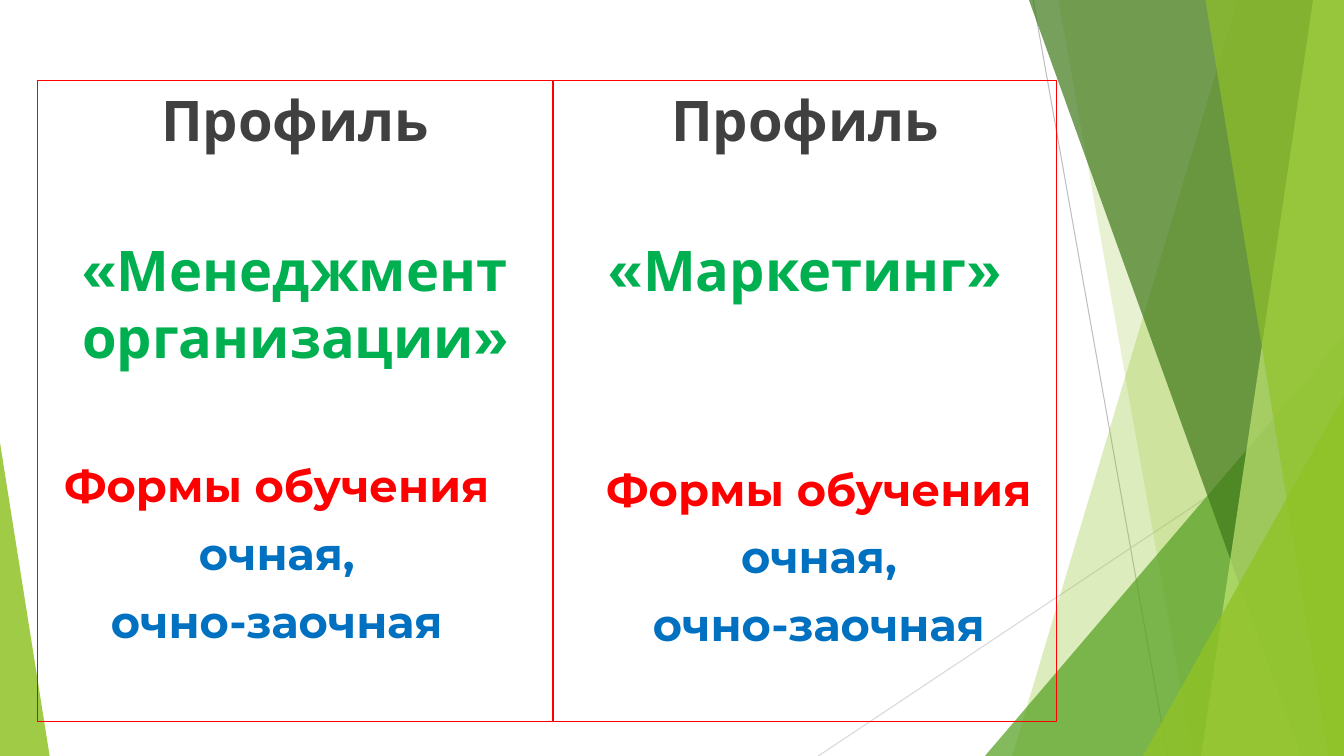
"""Builds a slide comparing two study profiles beside a green faceted backdrop."""
from lxml.etree import SubElement
from pptx import Presentation
from pptx.dml.color import RGBColor
from pptx.enum.shapes import MSO_CONNECTOR, MSO_SHAPE
from pptx.enum.text import MSO_ANCHOR, PP_ALIGN
from pptx.oxml.ns import qn
from pptx.util import Pt

GREEN = RGBColor(0x90, 0xC2, 0x26)
MID_GREEN = RGBColor(0x54, 0xA0, 0x21)
DARK_GREEN = RGBColor(0x3F, 0x78, 0x19)
PALE_GREEN = RGBColor(0xC0, 0xE4, 0x74)
SILVER = RGBColor(0xBF, 0xBF, 0xBF)
LIGHT_GREY = RGBColor(0xD9, 0xD9, 0xD9)
CHARCOAL = RGBColor(0x40, 0x40, 0x40)
PROFILE_GREEN = RGBColor(0x00, 0xB0, 0x50)
RED = RGBColor(0xFF, 0x00, 0x00)
BLUE = RGBColor(0x00, 0x70, 0xC0)
WIDTH, HEIGHT = 960, 540


def paint(facet, color, opacity):
    facet.shadow.inherit = False
    facet.fill.solid()
    facet.fill.fore_color.rgb = color
    facet.line.fill.background()
    tint = facet.fill._xPr.find(qn("a:solidFill"))[0]
    SubElement(tint, qn("a:alpha"), val=str(opacity * 1000))


def write(frame, text, *, first=False, font, size, color, before=10):
    paragraph = frame.paragraphs[0] if first else frame.add_paragraph()
    paragraph.alignment = PP_ALIGN.CENTER
    paragraph.space_before = Pt(before)
    run = paragraph.add_run()
    run.text = text
    run.font.name = font
    run.font.size = Pt(size)
    run.font.bold = True
    run.font.color.rgb = color


prs = Presentation()
prs.slide_width, prs.slide_height = Pt(WIDTH), Pt(HEIGHT)
slide = prs.slides.add_slide(prs.slide_layouts[6])
shapes = slide.shapes

for x1, y1, x2, y2, color in [
    (738, 0, 834, HEIGHT, SILVER),
    (WIDTH, 290, 584.5, HEIGHT, LIGHT_GREY),
]:
    ray = shapes.add_connector(MSO_CONNECTOR.STRAIGHT, Pt(x1), Pt(y1), Pt(x2), Pt(y2))
    ray.line.color.rgb = color
    ray.line.width = Pt(0.75)
    SubElement(ray._element.spPr, qn("a:effectLst"))

for kind, *place, color, opacity in [
    ("band", 884, 723, GREEN, 30),
    ("band", 756, 852, GREEN, 20),
    ("corner", 703.5, 256.5, 300, 1, MID_GREEN, 72),
    ("band", 735, 929.5, DARK_GREEN, 70),
    ("band", 938, 858, PALE_GREEN, 70),
    ("band", 861, 949, GREEN, 65),
    ("corner", 816.5, 143.5, 257, 1, GREEN, 80),
    ("corner", 0, 35.5, 224, 0, GREEN, 85),
]:
    if kind == "band":
        top_x, bottom_x = place
        outline = shapes.build_freeform(Pt(top_x), 0)
        outline.add_line_segments(
            [(Pt(WIDTH), 0), (Pt(WIDTH), Pt(HEIGHT)), (Pt(bottom_x), Pt(HEIGHT))]
        )
        facet = outline.convert_to_shape()
    else:
        left, width, height, apex = place
        facet = shapes.add_shape(
            MSO_SHAPE.ISOSCELES_TRIANGLE, Pt(left), Pt(HEIGHT - height), Pt(width), Pt(height)
        )
        facet.adjustments[0] = apex
    paint(facet, color, opacity)

for left, width, profile in [
    (27, 367.5, "«Менеджмент организации»"),
    (395.5, 359, "«Маркетинг»"),
]:
    panel = shapes.add_shape(MSO_SHAPE.RECTANGLE, Pt(left), Pt(57.5), Pt(width), Pt(458))
    panel.shadow.inherit = False
    panel.fill.background()
    panel.line.color.rgb = RED
    panel.line.width = Pt(0.75)
    frame = panel.text_frame
    frame.word_wrap = True
    frame.vertical_anchor = MSO_ANCHOR.TOP
    write(frame, "Профиль", first=True, font="Cabin", size=40, color=CHARCOAL)
    write(frame, profile, font="Cabin", size=40, color=PROFILE_GREEN, before=59)

for left, top, width in [(27, 323.5, 341.5), (405.5, 326, 359)]:
    forms = shapes.add_textbox(Pt(left), Pt(top), Pt(width), Pt(144)).text_frame
    forms.word_wrap = True
    write(forms, "Формы обучения", first=True, font="Montserrat", size=32, color=RED)
    for form in ("очная,", "очно-заочная"):
        write(forms, form, font="Montserrat", size=32, color=BLUE)

prs.save("out.pptx")
